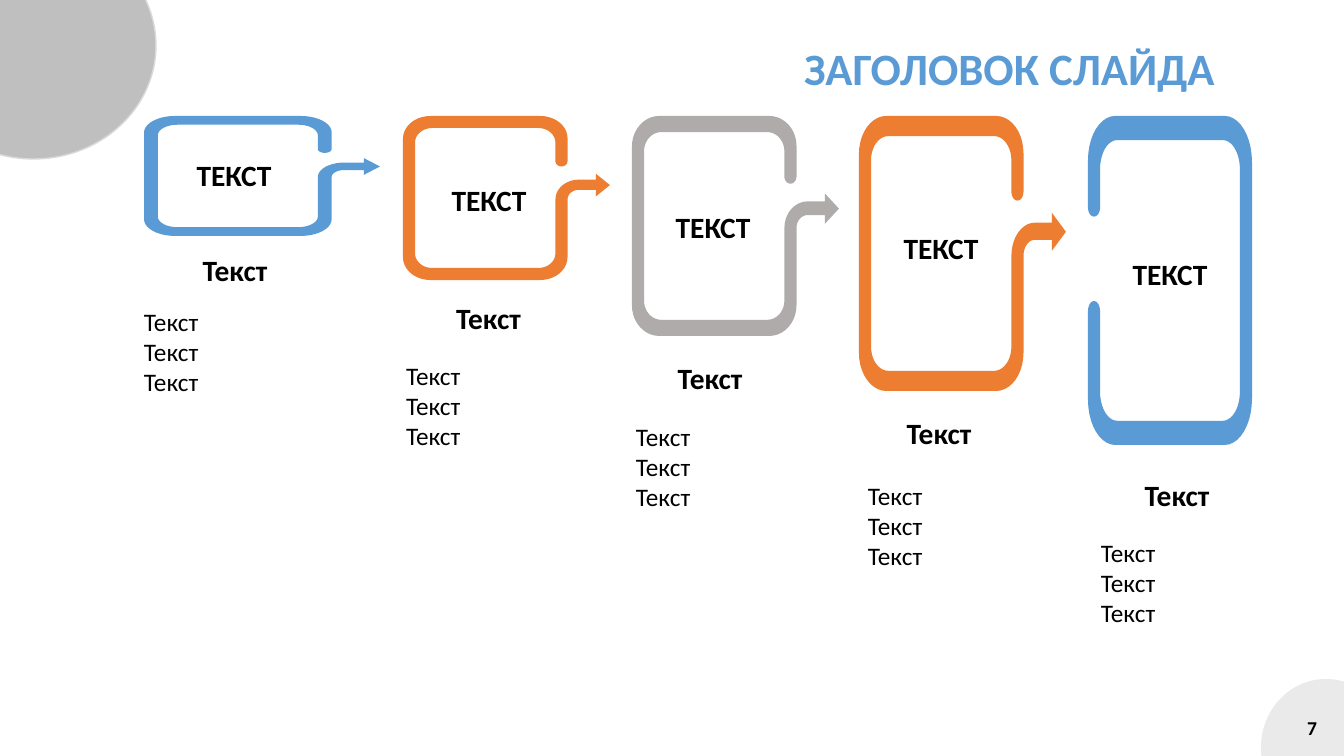
import math
from dataclasses import dataclass

import lxml.etree
import pptx
import pptx.dml.color
import pptx.enum.shapes
import pptx.enum.text
import pptx.oxml.ns
import pptx.util

EMU = 914400 / 100.8
ANCHOR = pptx.enum.text.MSO_ANCHOR
ALIGN = pptx.enum.text.PP_ALIGN


@dataclass(frozen=True)
class Theme:
    font: str = "Calibri"
    blue: str = "5B9BD5"
    orange: str = "ED7D31"
    gray: str = "AFABAB"
    disc: str = "BFBFBF"
    pale: str = "D9D9D9"
    ink: str = "000000"
    title: int = 32
    head: int = 21
    body: int = 18
    page: int = 14


@dataclass(frozen=True)
class Step:
    frame: tuple
    color: str
    label: tuple
    head: tuple
    body: tuple


THEME = Theme()

STEPS = [
    Step((144, 116, 236, 120), THEME.blue,
         (78, 152, 312, 45), (130, 247, 210, 45), (144, 301, 187, 102)),
    Step((403, 116, 207, 164), THEME.orange,
         (333, 177, 312, 45), (395, 295, 187, 45), (406, 355, 176, 102)),
    Step((632, 116, 207, 220), THEME.gray,
         (557, 204, 312, 45), (628, 355, 164, 45), (636, 416, 187, 102)),
    Step((859, 116, 207, 275), THEME.orange,
         (785, 225, 312, 45), (857, 410, 164, 45), (868, 475, 187, 102)),
    Step((1088, 116, 164, 329), THEME.blue,
         (1014, 251, 312, 45), (1095, 472, 164, 45), (1101, 532, 187, 102)),
]

# Each point names how it is reached: "" line, "h" or "v" quarter arc.
ARROW = (205, 273, [
    (27, 0, ""), (136, 0, ""), (163, 37, "h"), (163, 75, ""),
    (157, 84, "v"), (151, 75, "h"), (151, 44, ""), (134, 20, "v"),
    (29, 20, ""), (12, 44, "h"), (12, 229, ""), (29, 253, "v"),
    (134, 253, ""), (151, 229, "h"), (151, 139, ""), (174, 106, "v"),
    (191, 106, ""), (191, 96, ""), (205, 115, ""), (191, 134, ""),
    (191, 123, ""), (174, 123, ""), (163, 139, "h"), (163, 235, ""),
    (136, 273, "v"), (27, 273, ""), (0, 235, "h"), (0, 38, ""),
    (27, 0, "v")])

END = (163, 327, [
    (27, 0, ""), (136, 0, ""), (163, 46, "h"), (163, 281, ""),
    (136, 327, "v"), (27, 327, ""), (0, 282, "h"), (0, 194, ""),
    (6, 184, "v"), (12, 194, "h"), (12, 274, ""), (29, 303, "v"),
    (134, 303, ""), (151, 274, "h"), (151, 53, ""), (134, 24, "v"),
    (29, 24, ""), (12, 53, "h"), (12, 91, ""), (6, 100, "v"),
    (0, 91, "h"), (0, 44, ""), (27, 0, "v")])


def px(num):
    return pptx.util.Emu(round(num * EMU))


def rgb(code):
    return pptx.dml.color.RGBColor.from_string(code)


def paint(shape, color, line=None):
    shape.shadow.inherit = False
    shape.fill.solid()
    shape.fill.fore_color.rgb = rgb(color)
    if line:
        shape.line.color.rgb = rgb(line)
        shape.line.width = pptx.util.Pt(1)
    else:
        shape.line.fill.background()


def add_disc(slide, box, color, line=None, alpha=None):
    disc = slide.shapes.add_shape(
        pptx.enum.shapes.MSO_SHAPE.OVAL, *map(px, box))
    paint(disc, color, line)
    if alpha:
        tone = disc.fill._xPr.find(".//" + pptx.oxml.ns.qn("a:srgbClr"))
        lxml.etree.SubElement(
            tone, pptx.oxml.ns.qn("a:alpha"), val=str(alpha * 1000))


def add_text(slide, box, lines, size, color=THEME.ink, bold=True,
             align=ALIGN.CENTER, anchor=ANCHOR.MIDDLE, inset=True,
             grow=True, space=None):
    frame = slide.shapes.add_textbox(*map(px, box)).text_frame
    frame.word_wrap = True
    frame.vertical_anchor = anchor
    if grow:
        frame.auto_size = pptx.enum.text.MSO_AUTO_SIZE.SHAPE_TO_FIT_TEXT
    if not inset:
        frame.margin_left = frame.margin_right = 0
    for num, line in enumerate(lines):
        para = frame.add_paragraph() if num else frame.paragraphs[0]
        para.alignment = align
        para.line_spacing = space
        run = para.add_run()
        run.text = line
        run.font.name = THEME.font
        run.font.size = pptx.util.Pt(size)
        run.font.bold = bold
        run.font.color.rgb = rgb(color)


def trace(points, count=10):
    last = points[0][:2]
    for x, y, kind in points[1:]:
        if not kind:
            yield x, y
        else:
            for num in range(1, count + 1):
                turn = math.pi / 2 * num / count
                fast, slow = math.sin(turn), 1 - math.cos(turn)
                across, down = (fast, slow) if kind == "h" else (slow, fast)
                yield (last[0] + (x - last[0]) * across,
                       last[1] + (y - last[1]) * down)
        last = x, y


def add_frame(slide, box, form, color):
    left, top, width, height = box
    wide, high, points = form

    def place(x, y):
        return px(left + x * width / wide), px(top + y * height / high)

    pen = slide.shapes.build_freeform(*place(*points[0][:2]))
    pen.add_line_segments([place(*spot) for spot in trace(points)])
    paint(pen.convert_to_shape(), color)


def add_step(slide, step, form):
    add_frame(slide, step.frame, form, step.color)
    add_text(slide, step.label, ["ТЕКСТ"], THEME.head)
    add_text(slide, step.head, ["Текст"], THEME.head,
             anchor=ANCHOR.BOTTOM, inset=False)
    add_text(slide, step.body, ["Текст"] * 3, THEME.body, bold=False,
             align=ALIGN.LEFT, anchor=ANCHOR.TOP, inset=False)


def main():
    deck = pptx.Presentation()
    deck.slide_width, deck.slide_height = px(1344), px(756)
    slide = deck.slides.add_slide(deck.slide_layouts[6])
    add_disc(slide, (1261, 679, 130, 137), THEME.pale, alpha=53)
    add_text(slide, (1025, 708, 302, 40), ["7"], THEME.page,
             align=ALIGN.RIGHT, grow=False)
    add_disc(slide, (-89, -68, 245, 227), THEME.disc, line=THEME.pale)
    for step in STEPS:
        add_step(slide, step, END if step is STEPS[-1] else ARROW)
    add_text(slide, (417, 40, 808, 66), ["ЗАГОЛОВОК СЛАЙДА"], THEME.title,
             THEME.blue, align=ALIGN.RIGHT, grow=False, space=0.75)
    deck.save("out.pptx")


if __name__ == "__main__":
    main()
